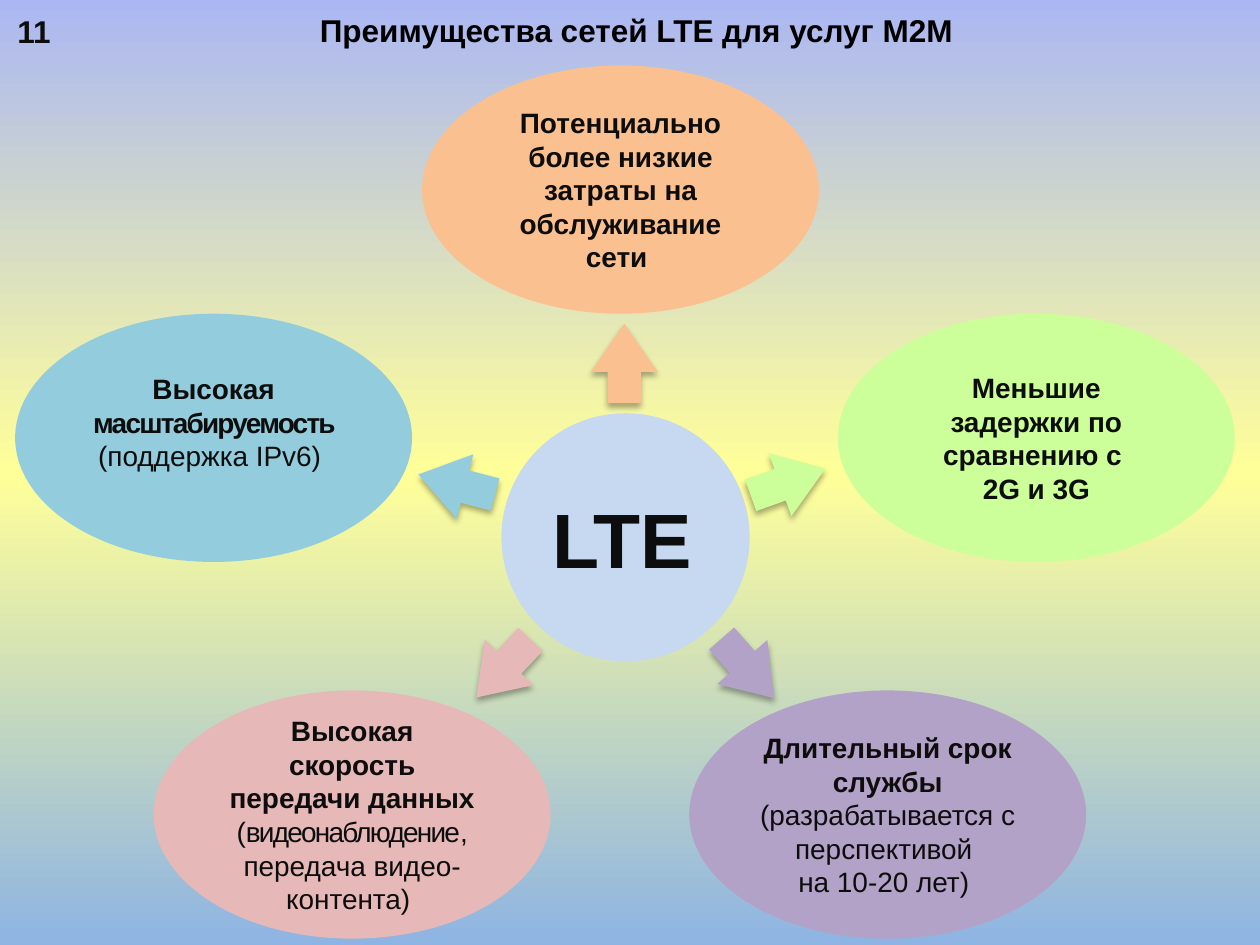
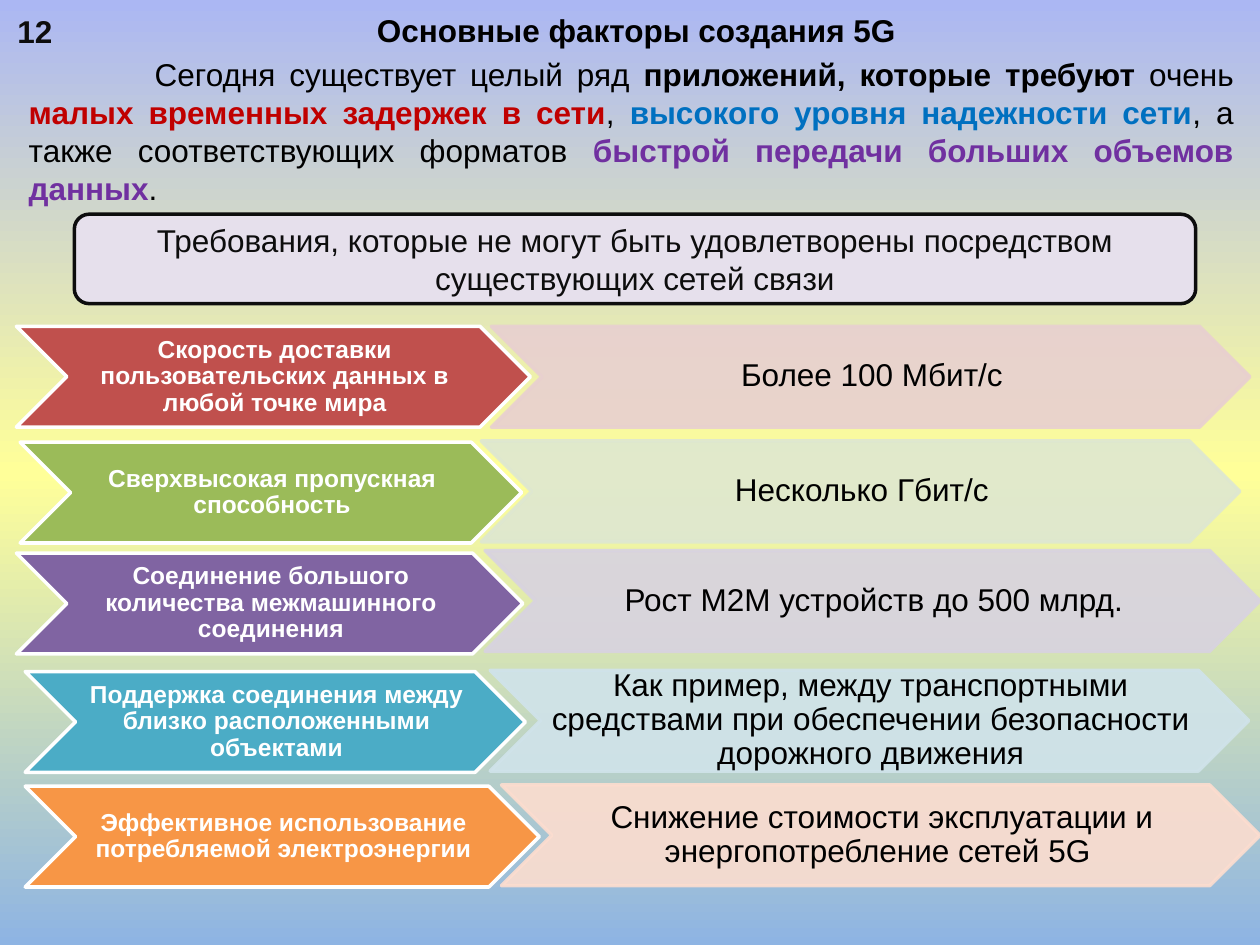
from lxml import etree
from pptx import Presentation
from pptx.dml.color import RGBColor
from pptx.enum import shapes, text
from pptx.oxml import ns
from pptx.util import Inches, Pt

# Shared colours
BLACK = RGBColor(0x00, 0x00, 0x00)
INK = RGBColor(0x0D, 0x0D, 0x0D)
WHITE = RGBColor(0xFF, 0xFF, 0xFF)
SKY = RGBColor(0x8E, 0xB4, 0xE3)
YELLOW = RGBColor(0xFF, 0xFF, 0x99)
LAVENDER = RGBColor(0xAB, 0xB7, 0xF3)
# Colours of the LTE advantages
PEACH = RGBColor(0xFA, 0xC0, 0x90)
LIME = RGBColor(0xCC, 0xFF, 0x99)
LILAC = RGBColor(0xB3, 0xA2, 0xC7)
ROSE = RGBColor(0xE6, 0xB9, 0xB8)
AQUA = RGBColor(0x93, 0xCD, 0xDD)
HUB_BLUE = RGBColor(0xC6, 0xD9, 0xF1)
# Colours of the 5G factors
CRIMSON = RGBColor(0xC0, 0x00, 0x00)
BLUE = RGBColor(0x00, 0x70, 0xC0)
VIOLET = RGBColor(0x70, 0x30, 0xA0)
PALE_LILAC = RGBColor(0xE6, 0xE0, 0xEC)
RED, PALE_RED = RGBColor(0xC0, 0x50, 0x4D), RGBColor(0xE8, 0xD0, 0xD0)
GREEN, PALE_GREEN = RGBColor(0x9B, 0xBB, 0x59), RGBColor(0xDE, 0xE7, 0xD1)
PURPLE, PALE_PURPLE = RGBColor(0x80, 0x64, 0xA2), RGBColor(0xD8, 0xD3, 0xE0)
TEAL, PALE_TEAL = RGBColor(0x4B, 0xAC, 0xC6), RGBColor(0xD0, 0xE3, 0xEA)
ORANGE, PALE_ORANGE = RGBColor(0xF7, 0x96, 0x46), RGBColor(0xFC, 0xDD, 0xCF)

FORM = shapes.MSO_SHAPE
ALIGN = text.PP_ALIGN
TOP, MIDDLE = text.MSO_ANCHOR.TOP, text.MSO_ANCHOR.MIDDLE
PLAIN = {"bold": False}
TIGHT = {"spacing": -100}


def inches(*lengths):
    return [Inches(length) for length in lengths]


def add_xml(parent, tag, **attributes):
    return etree.SubElement(parent, ns.qn(tag), attributes)


class Deck:
    """Holds the shared style and the slide being built."""

    font = {"name": "Arial", "size": 18, "bold": False, "color": INK}

    def __init__(self):
        self.prs = Presentation()
        self.prs.slide_width, self.prs.slide_height = inches(10, 7.5)
        self.slide = None
        self.paint_background()

    def paint_background(self):
        master = self.prs.slide_master
        fill = master.background.fill
        fill.gradient()
        fill.gradient_angle = 90
        stops = next(master._element.iter(ns.qn("a:gsLst")))
        stops.clear()
        for position, color in ((0, SKY), (50000, YELLOW), (100000, LAVENDER)):
            stop = add_xml(stops, "a:gs", pos=str(position))
            add_xml(stop, "a:srgbClr", val=str(color))

    def new_slide(self, number, heading):
        self.slide = self.prs.slides.add_slide(self.prs.slide_layouts[5])
        title = self.slide.shapes.title
        title.left, title.top, title.width, title.height = inches(0.44, 0.04, 9.29, 0.4)
        self.set_text(title, [heading], anchor=TOP, bold=True, color=BLACK)
        self.text_box((0.04, 0.05, 0.55, 0.4), [number], align=ALIGN.LEFT, bold=True)

    def set_text(self, shape, paragraphs, align=ALIGN.CENTER, anchor=MIDDLE,
                 margins=None, indent=0, line_spacing=None, **font):
        """Each paragraph is a string or a list of (text, changes to the font)."""
        frame = shape.text_frame
        frame.word_wrap = True
        frame.auto_size = text.MSO_AUTO_SIZE.NONE
        frame.vertical_anchor = anchor
        for side, margin in (margins or {}).items():
            setattr(frame, "margin_" + side, Inches(margin))
        for index, content in enumerate(paragraphs):
            paragraph = frame.add_paragraph() if index else frame.paragraphs[0]
            paragraph.alignment = align
            paragraph.line_spacing = line_spacing
            if indent:
                paragraph._p.get_or_add_pPr().set("indent", str(Inches(indent)))
            runs = [(content, {})] if isinstance(content, str) else content
            for words, changes in runs:
                self.add_run(paragraph, words, {**self.font, **font, **changes})

    def add_run(self, paragraph, words, style):
        run = paragraph.add_run()
        run.text = words
        run.font.color.rgb = style["color"]
        for key, value in {"name": style["name"], "size": Pt(style["size"]),
                           "bold": style["bold"]}.items():
            setattr(run.font, key, value)
        if "spacing" in style:
            run._r.get_or_add_rPr().set("spc", str(style["spacing"]))

    def text_box(self, place, paragraphs, **style):
        box = self.slide.shapes.add_textbox(*inches(*place))
        self.set_text(box, paragraphs, anchor=TOP, **style)

    def shape(self, form, place, fill, paragraphs=(), line=None, opacity=None, **style):
        shape = self.slide.shapes.add_shape(form, *inches(*place))
        shape.shadow.inherit = False
        shape.fill.solid()
        shape.fill.fore_color.rgb = fill
        if line is None:
            shape.line.fill.background()
        else:
            shape.line.color.rgb = line
            shape.line.width = Pt(2)
        if opacity:
            for color in list(shape._element.spPr.iter(ns.qn("a:srgbClr"))):
                add_xml(color, "a:alpha", val=str(opacity * 1000))
        if paragraphs:
            self.set_text(shape, paragraphs, **style)
        return shape

    def arrow(self, left, top, rotation, fill):
        arrow = self.shape(FORM.RIGHT_ARROW, (left, top, 0.63, 0.53), fill)
        arrow.adjustments[1] = 0.72
        arrow.rotation = rotation
        effects = arrow._element.spPr.find(ns.qn("a:effectLst"))
        shadow = add_xml(effects, "a:outerShdw", blurRad=str(Pt(3.5)),
                         dist=str(Pt(2.2)), dir="5400000", rotWithShape="0")
        color = add_xml(shadow, "a:srgbClr", val=str(BLACK))
        add_xml(color, "a:alpha", val="32000")

    def chevron(self, left, top, width, fill, words, **style):
        self.shape(FORM.CHEVRON, (left, top, width, 0.8), fill, [words], line_spacing=0.9,
                   margins={"left": 0.02, "top": 0.01, "right": 0, "bottom": 0.01}, **style)


def lte_advantages(deck):
    deck.new_slide("11", "Преимущества сетей LTE для услуг М2М ")

    # Hub
    deck.shape(FORM.OVAL, (3.98, 3.28, 1.97, 1.97), HUB_BLUE,
               [[("LTE", {}), (" ", {"name": "Calibri", "size": 18})]], size=44, bold=True)

    # Advantages: colour, ellipse corner, arrow corner and rotation, wording, bottom margin
    advantages = [
        (PEACH, (3.35, 0.52), (4.64, 2.62, 270),
         ["Потенциально более низкие затраты на обслуживание сети "], 0.05),
        (LIME, (6.65, 2.49), (5.94, 3.56, 340.3),
         ["Меньшие задержки по сравнению с ", "2G и 3G"], 0.05),
        (LILAC, (5.47, 5.48), (5.62, 5.04, 48.7),
         [[("Длительный срок службы ", {}), ("(разрабатывается с перспективой ", PLAIN)],
          [("на 10-20 лет) ", PLAIN)]], 0.05),
        (ROSE, (1.22, 5.48), (3.68, 5.04, 133),
         [[("Высокая скорость передачи данных ", {}), ("(", PLAIN),
           ("видеонаблюдение", {**PLAIN, **TIGHT}),
           (", передача видео-контента) ", PLAIN)]], 0.05),
        (AQUA, (0.12, 2.49), (3.31, 3.58, 194.6),
         [[("Высокая ", {}), ("масштабируемость ", TIGHT),
           ("(поддержка IPv6) ", PLAIN)]], 0.3),
    ]
    for color, corner, arrow, wording, bottom in advantages:
        deck.shape(FORM.OVAL, (*corner, 3.15, 1.97), color, wording,
                   margins={"bottom": bottom}, size=16, bold=True)
        deck.arrow(*arrow, color)


def factors_of_5g(deck):
    deck.new_slide("12", "Основные факторы создания 5G ")

    # Introduction
    introduction = [
        ("Сегодня существует целый ряд ", {}),
        ("приложений, которые требуют ", {"bold": True}),
        ("очень ", {}),
        ("малых временных задержек в сети", {"bold": True, "color": CRIMSON}),
        (", ", {}),
        ("высокого уровня надежности сети", {"bold": True, "color": BLUE}),
        (", а также соответствующих форматов ", {}),
        ("быстрой передачи больших объемов данных", {"bold": True, "color": VIOLET}),
        (".", {}),
    ]
    deck.text_box((0.13, 0.39, 9.76, 1.31), [introduction],
                  align=ALIGN.JUSTIFY, indent=1, color=BLACK)
    deck.shape(FORM.ROUNDED_RECTANGLE, (0.59, 1.7, 8.9, 0.71), PALE_LILAC,
               ["Требования, которые не могут быть удовлетворены посредством "
                "существующих сетей связи"], line=INK)

    # Factors: (left, top, width, colour, wording) of the requirement and of its target
    factors = [
        ((0.13, 2.59, 4.08, RED,
          "Скорость доставки пользовательских данных в любой точке мира"),
         (3.9, 2.59, 6.02, PALE_RED, "Более 100 Мбит/с")),
        ((0.16, 3.51, 3.98, GREEN, "Сверхвысокая пропускная способность"),
         (3.82, 3.5, 6.02, PALE_GREEN, "Несколько Гбит/с")),
        ((0.13, 4.39, 4.02, PURPLE,
          "Соединение большого количества межмашинного соединения"),
         (3.85, 4.37, 6.15, PALE_PURPLE, "Рост М2М устройств до 500 млрд.")),
        ((0.2, 5.33, 3.97, TEAL,
          "Поддержка соединения между близко расположенными объектами"),
         (3.89, 5.32, 6.02, PALE_TEAL,
          "Как пример, между транспортными средствами при обеспечении "
          "безопасности дорожного движения")),
        ((0.2, 6.24, 4.08, ORANGE,
          "Эффективное использование потребляемой электроэнергии"),
         (3.98, 6.23, 6.02, PALE_ORANGE,
          "Снижение стоимости эксплуатации и энергопотребление сетей 5G ")),
    ]
    for requirement, target in factors:
        deck.chevron(*requirement, line=WHITE, size=14, bold=True, color=WHITE)
        deck.chevron(*target, line=target[3], opacity=90, color=BLACK)


def main():
    deck = Deck()
    lte_advantages(deck)
    factors_of_5g(deck)
    deck.prs.save("out.pptx")


if __name__ == "__main__":
    main()
